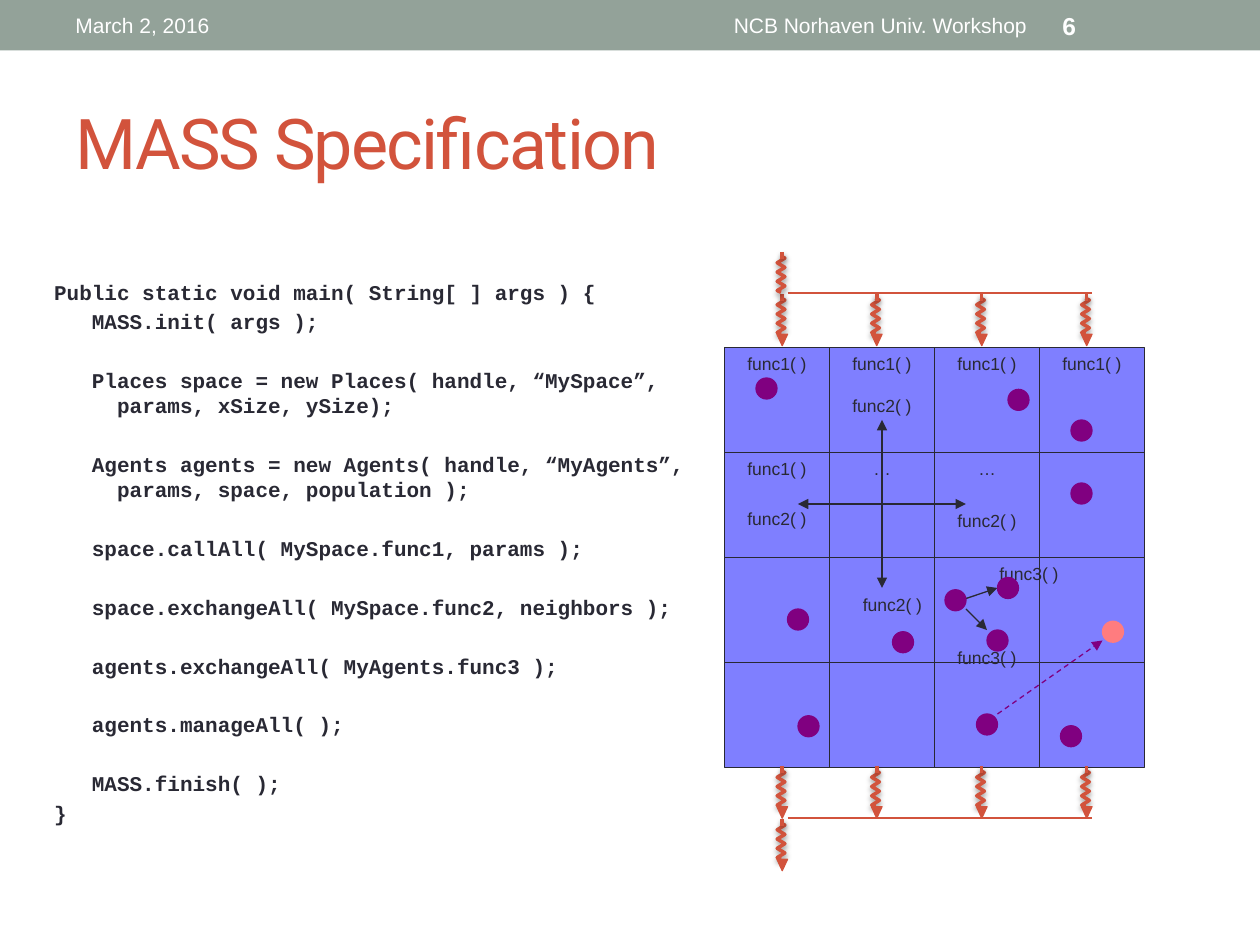
"""Build the MASS Specification slide."""
import dataclasses

import lxml.etree
import pptx
import pptx.dml.color
import pptx.enum.dml
import pptx.enum.shapes
import pptx.enum.text
import pptx.oxml.ns
import pptx.util

Pt = pptx.util.Pt
qn = pptx.oxml.ns.qn
KIND = pptx.enum.shapes.MSO_SHAPE
ALIGN = pptx.enum.text.PP_ALIGN
ANCHOR = pptx.enum.text.MSO_ANCHOR


@dataclasses.dataclass(frozen=True)
class Theme:
    """Colours, fonts and type sizes of the slide."""
    bar: str = "93A299"
    red: str = "D2533C"
    ink: str = "292934"
    cell: str = "0000FF"
    agent: str = "800080"
    ghost: str = "FF7C7F"
    white: str = "FFFFFF"
    sans: str = "Arial"
    mono: str = "Courier New"
    head: str = "Roboto"
    title: int = 40
    page: int = 14
    text: int = 12
    label: int = 10


THEME = Theme()
CODE = [
    (0, 0, "Public static void main( String[ ] args ) {"),
    (1, 0, "MASS.init( args );"),
    (1, 1, "Places space = new Places( handle, “MySpace”, params, xSize, ySize);"),
    (1, 1, "Agents agents = new Agents( handle, “MyAgents”, params, space, population );"),
    (1, 1, "space.callAll( MySpace.func1, params );"),
    (1, 1, "space.exchangeAll( MySpace.func2, neighbors );"),
    (1, 1, "agents.exchangeAll( MyAgents.func3 );"),
    (1, 1, "agents.manageAll( );"),
    (1, 1, "MASS.finish( );"),
    (0, 0, "}"),
]
LABELS = {
    "func1( )": [(420, 198), (480, 198), (540, 198), (600, 198), (420, 258)],
    "func2( )": [(420, 286.5), (480, 222), (540, 288), (486, 336)],
    "func3( )": [(564, 318), (540, 366)],
    "…": [(492, 258), (552, 258)],
}
AGENTS = [(540, 337), (576, 222.5), (510, 361), (612, 276), (450, 348), (612, 240),
          (606, 414.7), (432, 216), (456, 409), (564, 360), (570, 330), (558, 408)]
THREADS = (447, 501, 561, 621)


def tint(code):
    """Turn a hex code into a colour."""
    return pptx.dml.color.RGBColor.from_string(code)


def style(font, name, size, color, bold=False):
    """Set the look of a font."""
    font.name, font.size, font.bold = name, Pt(size), bold
    font.color.rgb = tint(color)


def write(slide, box, text, size, color, name=THEME.sans, bold=False,
          align=ALIGN.LEFT, anchor=ANCHOR.MIDDLE, wrap=True):
    """Add a text box with one paragraph and return the paragraph."""
    frame = slide.shapes.add_textbox(*map(Pt, box)).text_frame
    frame.word_wrap, frame.vertical_anchor = wrap, anchor
    para = frame.paragraphs[0]
    para.text, para.alignment = text, align
    style(para.font, name, size, color, bold)
    return para


def shape(slide, kind, box, fill, line=None, alpha=None):
    """Add a filled preset shape."""
    form = slide.shapes.add_shape(kind, *map(Pt, box))
    form.shadow.inherit = False
    form.fill.solid()
    form.fill.fore_color.rgb = tint(fill)
    if alpha:
        color = form.fill._xPr.find(".//" + qn("a:srgbClr"))
        lxml.etree.SubElement(color, qn("a:alpha"), val=str(alpha * 1000))
    if line:
        form.line.color.rgb, form.line.width = tint(line), Pt(0.75)
    else:
        form.line.fill.background()
    return form


def shade(effects):
    """Put a soft drop shadow in an effect list."""
    drop = lxml.etree.SubElement(
        effects, qn("a:outerShdw"), blurRad=str(Pt(3.1)), dist=str(Pt(1.6)),
        dir="5400000", rotWithShape="0")
    black = lxml.etree.SubElement(drop, qn("a:srgbClr"), val="000000")
    lxml.etree.SubElement(black, qn("a:alpha"), val="38000")


def link(slide, start, end, color, width=0.75, arrow=False, dash=False, soft=False):
    """Add a straight line, with an arrowhead, dashes or a shadow if asked."""
    wire = slide.shapes.add_connector(
        pptx.enum.shapes.MSO_CONNECTOR.STRAIGHT, *map(Pt, (*start, *end)))
    wire.line.color.rgb, wire.line.width = tint(color), Pt(width)
    if dash:
        wire.line.dash_style = pptx.enum.dml.MSO_LINE.DASH
    props = wire._element.spPr
    if arrow:
        lxml.etree.SubElement(props.find(qn("a:ln")), qn("a:tailEnd"), type="triangle")
    effects = lxml.etree.SubElement(props, qn("a:effectLst"))
    if soft:
        shade(effects)


def thread(slide, mid, top, tip=True):
    """Draw a zigzag thread that runs down from top."""
    axis = mid - 0.7
    turns = [(axis + (-2.2 if i % 2 else 2.2), top + 3.5 + 2.65 * i) for i in range(8)]
    spots = [(Pt(x), Pt(y)) for x, y in [(axis, top + 2.4), *turns, (axis, top + 23)]]
    pen = slide.shapes.build_freeform(*spots[0], scale=1.0)
    pen.add_line_segments(spots[1:], close=False)
    coil = pen.convert_to_shape()
    coil.fill.background()
    coil.line.color.rgb, coil.line.width = tint(THEME.red), Pt(2)
    coil.shadow.inherit = False
    shade(coil._element.spPr.find(qn("a:effectLst")))
    link(slide, (mid, top), (mid, top + 3.75), THEME.red, 2, soft=True)
    if tip:
        head = shape(slide, KIND.ISOSCELES_TRIANGLE, (mid - 3, top + 23, 6, 6.5),
                     THEME.red, THEME.red)
        head.rotation = 180


def dot(slide, spot, color):
    """Draw one agent."""
    shape(slide, KIND.OVAL, (*spot, 12, 12), color, color)


def listing(slide):
    """Write the program code."""
    frame = slide.shapes.add_textbox(*map(Pt, (23.8, 156.2, 378, 354))).text_frame
    frame.word_wrap = True
    for i, (level, gap, text) in enumerate(CODE):
        para = frame.add_paragraph() if i else frame.paragraphs[0]
        para.text, para.level = text, level
        para.line_spacing = Pt(14.4)
        para.space_before = Pt(2.4 + 16.8 * gap)
        props = para._p.get_or_add_pPr()
        props.set("marL", str(Pt(14.4 + 21.6 * level)))
        props.set("indent", str(Pt(-14.4)))
        style(para.font, THEME.mono, THEME.text, THEME.ink, True)


def header(slide):
    """Draw the top bar, its texts and the title."""
    shape(slide, KIND.RECTANGLE, (0, 0, 720, 28.8), THEME.bar)
    write(slide, (36, 1.5, 228, 26), "March 2, 2016", THEME.text, THEME.white)
    write(slide, (270, 1.5, 324, 26), "NCB Norhaven Univ. Workshop", THEME.text,
          THEME.white, align=ALIGN.RIGHT)
    write(slide, (600, 1.5, 84, 26), "6", THEME.page, THEME.white, bold=True)
    title = write(slide, (36, 42, 648, 78), "MASS Specification", THEME.title,
                  THEME.red, THEME.head)
    title.runs[0]._r.get_or_add_rPr().set("spc", "-100")


def places(slide):
    """Draw the grid of places, its threads, labels and agents."""
    for i in range(16):
        row, col = divmod(i, 4)
        shape(slide, KIND.RECTANGLE, (414 + 60 * col, 198.6 + 60 * row, 60, 60),
              THEME.cell, THEME.ink, 50)
    for top, bar in ((168, 167.6), (438, 467.5)):
        for mid in THREADS:
            thread(slide, mid, top)
        link(slide, (450, bar), (624, bar), THEME.red, 1)
    thread(slide, THREADS[0], 144, tip=False)
    thread(slide, THREADS[0], 468)
    for dx, dy in ((48, 0), (0, -48), (0, 48), (-48, 0)):
        link(slide, (504, 288), (504 + dx, 288 + dy), THEME.ink, arrow=True)
    for text, spots in LABELS.items():
        for spot in spots:
            write(slide, (*spot, 24.5 if text == "…" else 48, 19.4), text, THEME.label,
                  THEME.ink, anchor=ANCHOR.TOP, wrap=False)
    link(slide, (552, 342), (570, 336), THEME.ink, arrow=True)
    link(slide, (552, 348), (564, 360), THEME.ink, arrow=True)
    dot(slide, (630, 355), THEME.ghost)
    link(slide, (570, 408), (630, 366), THEME.agent, arrow=True, dash=True)
    for spot in AGENTS:
        dot(slide, spot, THEME.agent)


def main():
    """Build and save the slide."""
    deck = pptx.Presentation()
    deck.slide_width, deck.slide_height = Pt(720), Pt(540)
    slide = deck.slides.add_slide(deck.slide_layouts[6])
    header(slide)
    listing(slide)
    places(slide)
    deck.save("out.pptx")


if __name__ == "__main__":
    main()
